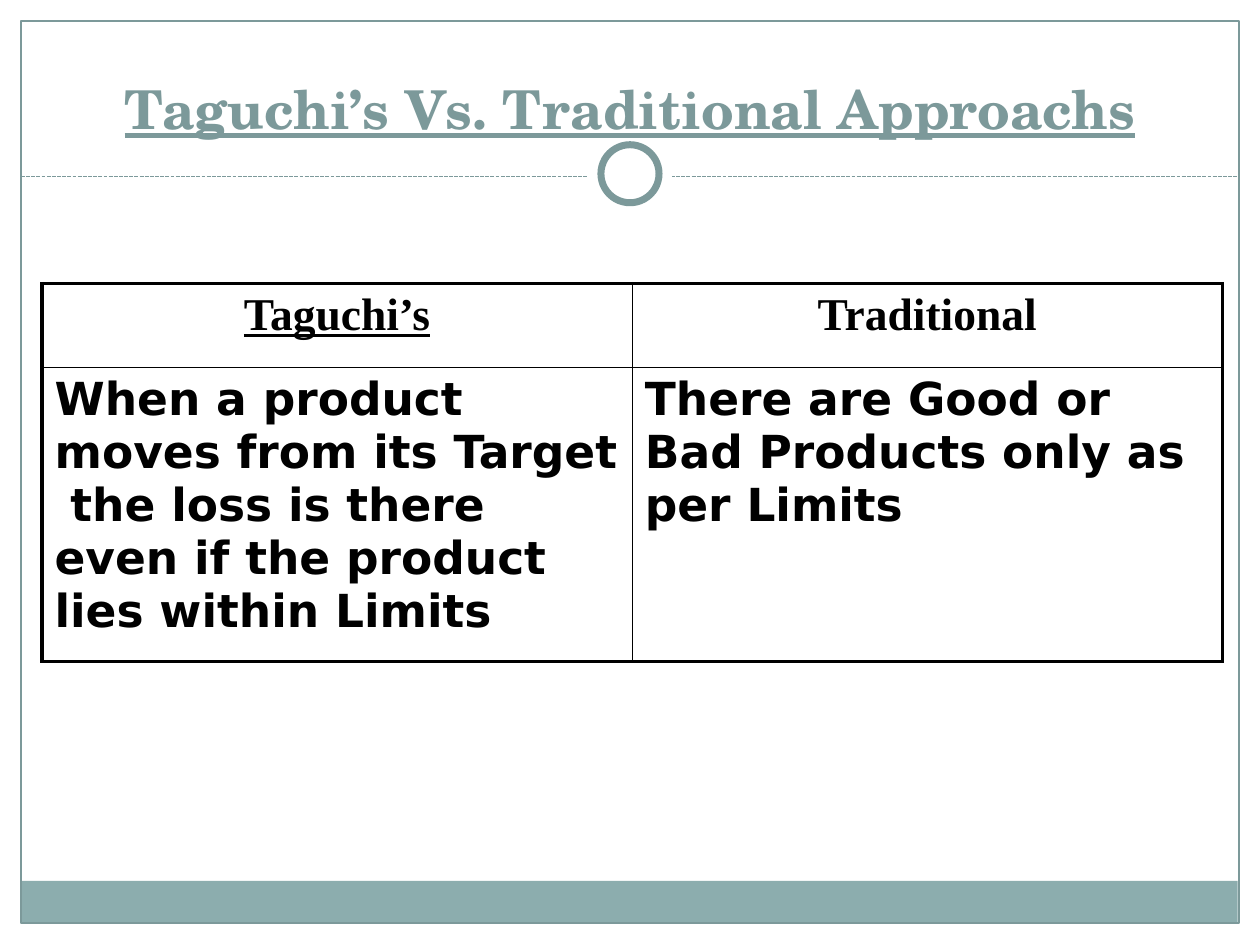
from dataclasses import dataclass
from typing import Optional

from lxml.etree import SubElement
from pptx import Presentation
from pptx.dml.color import RGBColor
from pptx.enum.dml import MSO_LINE
from pptx.enum.shapes import MSO_CONNECTOR, MSO_SHAPE
from pptx.enum.text import MSO_ANCHOR, PP_ALIGN
from pptx.oxml.ns import qn
from pptx.util import Pt

WHITE = RGBColor(0xFF, 0xFF, 0xFF)
BLACK = RGBColor(0x00, 0x00, 0x00)
TEAL = RGBColor(0x7C, 0x99, 0x9A)
FOOTER = RGBColor(0x8C, 0xAD, 0xAE)

WIDTH, HEIGHT, MARGIN = 720, 540, 12
RULE_Y = 100.8
OUTER, INNER = 2.25, 1


@dataclass
class Decor:
    kind: MSO_SHAPE
    left: float
    top: float
    width: float
    height: float
    fill: Optional[RGBColor] = None
    line_width: float = 0


@dataclass
class CellText:
    text: str
    font: str
    align: PP_ALIGN = PP_ALIGN.LEFT
    underline: bool = False


BACKDROP = [
    Decor(MSO_SHAPE.RECTANGLE, 0, 0, WIDTH, 109.4, WHITE),
    Decor(MSO_SHAPE.RECTANGLE, 0, 0, MARGIN, HEIGHT, WHITE),
    Decor(MSO_SHAPE.RECTANGLE, WIDTH - MARGIN, 0, MARGIN, HEIGHT, WHITE),
    Decor(MSO_SHAPE.RECTANGLE, 11.75, 503.3, 695.5, 24.4, FOOTER),
    Decor(MSO_SHAPE.RECTANGLE, MARGIN, MARGIN, WIDTH - 2 * MARGIN, 515.5, None, 0.75),
]
RING = [
    Decor(MSO_SHAPE.OVAL, 336, 75.3, 48, 48, WHITE),
    Decor(MSO_SHAPE.OVAL, 343.4, 82.7, 33.2, 33.2, WHITE, 4),
]
CELLS = [
    [CellText("Taguchi’s", "Times New Roman", PP_ALIGN.CENTER, True),
     CellText("Traditional", "Times New Roman", PP_ALIGN.CENTER)],
    [CellText("When a product moves from its Target  the loss is there even if "
              "the product lies within Limits", "DejaVu Sans"),
     CellText("There are Good or Bad Products only as per Limits", "DejaVu Sans")],
]


def draw_decor(s, decor: Decor) -> None:
    sp = s.shapes.add_shape(decor.kind, Pt(decor.left), Pt(decor.top),
                            Pt(decor.width), Pt(decor.height))
    sp.shadow.inherit = False
    if decor.fill is None:
        sp.fill.background()
    else:
        sp.fill.solid()
        sp.fill.fore_color.rgb = decor.fill
    if decor.line_width:
        sp.line.color.rgb = TEAL
        sp.line.width = Pt(decor.line_width)
    else:
        sp.line.fill.background()


def draw_rule(s) -> None:
    rule = s.shapes.add_connector(MSO_CONNECTOR.STRAIGHT, Pt(MARGIN), Pt(RULE_Y),
                                  Pt(WIDTH - MARGIN), Pt(RULE_Y))
    rule.line.color.rgb = TEAL
    rule.line.width = Pt(0.75)
    rule.line.dash_style = MSO_LINE.SQUARE_DOT
    SubElement(rule._element.spPr, qn("a:effectLst"))


def add_run(p, text: str, font: str, size: float, color: RGBColor, underline: bool) -> None:
    r = p.add_run()
    r.text = text
    r.font.name = font
    r.font.size = Pt(size)
    r.font.bold = True
    r.font.underline = underline
    r.font.color.rgb = color


def set_borders(cell, widths: dict[str, float]) -> None:
    props = cell._tc.get_or_add_tcPr()
    for index, (side, width) in enumerate(widths.items()):
        line = props.makeelement(qn(f"a:ln{side}"), {"w": str(Pt(width))})
        fill = SubElement(line, qn("a:solidFill"))
        SubElement(fill, qn("a:srgbClr"), val=str(BLACK))
        props.insert(index, line)


def draw_table(s) -> None:
    rows, cols = len(CELLS), len(CELLS[0])
    table = s.shapes.add_table(rows, cols, Pt(24), Pt(162), Pt(674.6), Pt(216)).table
    table.first_row = table.horz_banding = False
    for row, height in zip(table.rows, (48, 168)):
        row.height = Pt(height)
    for i, row in enumerate(CELLS):
        for j, content in enumerate(row):
            cell = table.cell(i, j)
            cell.fill.background()
            set_borders(cell, {
                "L": OUTER if j == 0 else INNER,
                "R": OUTER if j == cols - 1 else INNER,
                "T": OUTER if i == 0 else INNER,
                "B": OUTER if i == rows - 1 else INNER,
            })
            p = cell.text_frame.paragraphs[0]
            p.alignment = content.align
            p.space_before = Pt(5.2)
            add_run(p, content.text, content.font, 26, BLACK, content.underline)


def draw_title(s) -> None:
    title = s.shapes.title
    title.left, title.top, title.width, title.height = Pt(45), Pt(24), Pt(630), Pt(59.8)
    tf = title.text_frame
    tf.vertical_anchor = MSO_ANCHOR.BOTTOM
    p = tf.paragraphs[0]
    p.alignment = PP_ALIGN.CENTER
    add_run(p, "Taguchi’s Vs. Traditional Approachs", "TeX Gyre Schola", 30.6, TEAL, True)
    # Bring the title in front of the white bands
    s.shapes._spTree.append(title._element)


def main() -> None:
    prs = Presentation()
    prs.slide_width, prs.slide_height = Pt(WIDTH), Pt(HEIGHT)
    s = prs.slides.add_slide(prs.slide_layouts[5])

    # Frame, dashed rule and ring
    for decor in BACKDROP:
        draw_decor(s, decor)
    draw_rule(s)
    for decor in RING:
        draw_decor(s, decor)

    # Content
    draw_title(s)
    draw_table(s)
    prs.save("out.pptx")


if __name__ == "__main__":
    main()
